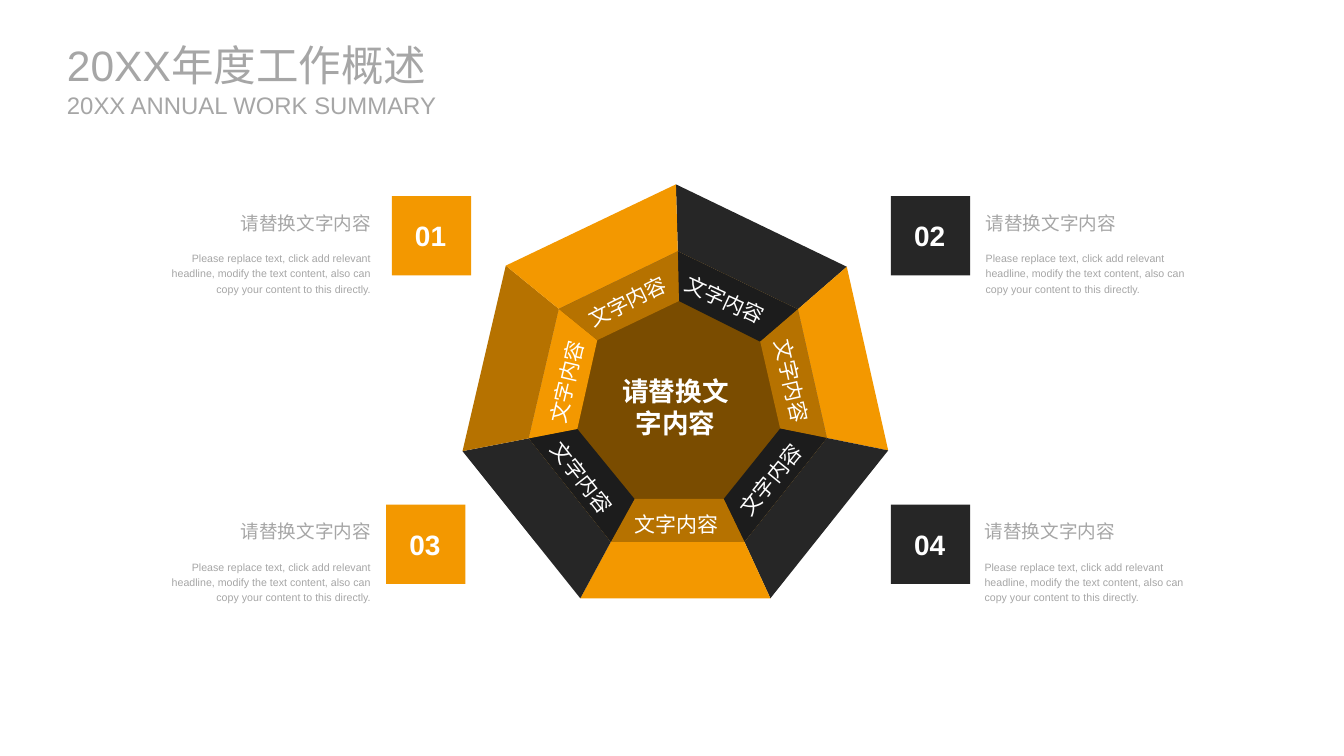
import pptx
import pptx.dml.color
import pptx.enum.shapes
import pptx.enum.text
import pptx.util

Cm = pptx.util.Cm
ALIGN = pptx.enum.text.PP_ALIGN
ANCHOR = pptx.enum.text.MSO_ANCHOR

ORANGE, DARK, BROWN = "F39800", "262626", "B67200"
BLACK, DEEP_BROWN = "1C1C1C", "7A4C00"
GREY, WHITE = "A6A6A6", "FFFFFF"

# Corners of the three nested heptagons in cm, clockwise from the top
OUTER = [(17.96, 4.9), (22.5, 7.09), (23.6, 11.97), (20.47, 15.9),
         (15.42, 15.9), (12.29, 11.99), (13.44, 7.06)]
MIDDLE = [(18.01, 6.68), (21.2, 8.22), (21.97, 11.64), (19.78, 14.4),
          (16.23, 14.4), (14.05, 11.65), (14.85, 8.21)]
INNER = [(18.04, 8), (20.2, 9.08), (20.73, 11.39), (19.23, 13.26),
         (16.86, 13.26), (15.34, 11.4), (15.87, 9.04)]
OUTER_COLOURS = [DARK, ORANGE, DARK, ORANGE, DARK, BROWN, ORANGE]
INNER_COLOURS = [BLACK, BROWN, BLACK, BROWN, BLACK, ORANGE, BROWN]

# Centre x, centre y and rotation of each panel label
PANEL_LABELS = [(19.3, 7.9, 24.7), (21.11, 10.11, 77.4), (20.42, 12.7, 308.9),
                (17.98, 13.87, 0), (15.52, 12.65, 52), (14.99, 10.13, 283.2),
                (16.64, 7.95, 334.1)]

# Number, tile left, tile top, text left, alignment, tile colour
CARDS = [("01", 10.41, 5.21, 4.11, ALIGN.RIGHT, ORANGE),
         ("02", 23.67, 5.21, 26.19, ALIGN.LEFT, DARK),
         ("03", 10.26, 13.41, 4.11, ALIGN.RIGHT, ORANGE),
         ("04", 23.67, 13.41, 26.16, ALIGN.LEFT, DARK)]
CARD_HEADING = "请替换文字内容"
CARD_BODY = ("Please replace text, click add relevant headline, modify the text "
             "content, also can copy your content to this directly.")


def rgb(colour):
    return pptx.dml.color.RGBColor.from_string(colour)


def paint(shape, colour):
    shape.shadow.inherit = False
    shape.fill.solid()
    shape.fill.fore_color.rgb = rgb(colour)
    shape.line.fill.background()


def write(shape, text, size, colour, align=ALIGN.LEFT, anchor=ANCHOR.TOP,
          bold=False, spacing=1.0, insets=(0, 0, 0, 0)):
    """Fill a shape with one paragraph; insets are left, top, right, bottom in cm."""
    frame = shape.text_frame
    frame.word_wrap = True
    frame.auto_size = pptx.enum.text.MSO_AUTO_SIZE.NONE
    frame.vertical_anchor = anchor
    (frame.margin_left, frame.margin_top,
     frame.margin_right, frame.margin_bottom) = map(Cm, insets)
    frame.text = text
    paragraph = frame.paragraphs[0]
    paragraph.alignment = align
    paragraph.line_spacing = spacing
    paragraph.font.name = "Arial"
    paragraph.font.size = pptx.util.Pt(size)
    paragraph.font.bold = bold
    paragraph.font.color.rgb = rgb(colour)


def add_text(slide, left, top, width, height, text, size, colour, **style):
    box = slide.shapes.add_textbox(Cm(left), Cm(top), Cm(width), Cm(height))
    write(box, text, size, colour, **style)
    return box


def add_polygon(slide, corners, colour):
    points = [(Cm(x), Cm(y)) for x, y in corners]
    builder = slide.shapes.build_freeform(*points[0])
    builder.add_line_segments(points[1:], close=True)
    paint(builder.convert_to_shape(), colour)


def add_ring(slide, outside, inside, colours):
    """Draw one four-sided panel per heptagon edge."""
    for i, colour in enumerate(colours):
        j = (i + 1) % len(colours)
        add_polygon(slide, [outside[i], outside[j], inside[j], inside[i]], colour)


def add_heptagon(slide):
    add_ring(slide, OUTER, MIDDLE, OUTER_COLOURS)
    add_polygon(slide, MIDDLE, DEEP_BROWN)
    add_ring(slide, MIDDLE, INNER, INNER_COLOURS)
    add_text(slide, 16.36, 9.83, 3.18, 1.93, "请替换文字内容", 20, WHITE, bold=True,
             align=ALIGN.CENTER, anchor=ANCHOR.BOTTOM, insets=(0.1,) * 4)
    width, height = 3.15, 0.66
    for x, y, angle in PANEL_LABELS:
        label = add_text(slide, x - width / 2, y - height / 2, width, height,
                         "文字内容", 15.8, WHITE, align=ALIGN.CENTER,
                         anchor=ANCHOR.MIDDLE, spacing=1.2, insets=(0.05,) * 4)
        label.rotation = angle


def add_card(slide, number, tile_left, top, text_left, align, colour):
    tile = slide.shapes.add_shape(pptx.enum.shapes.MSO_SHAPE.RECTANGLE,
                                  Cm(tile_left), Cm(top), Cm(2.11), Cm(2.11))
    paint(tile, colour)
    write(tile, number, 21.1, WHITE, bold=True, align=ALIGN.CENTER,
          anchor=ANCHOR.MIDDLE, spacing=1.2, insets=(0, 0, 0.05, 0.2))
    add_text(slide, text_left, top + 0.15, 5.75, 1, CARD_HEADING, 14, GREY,
             align=align, anchor=ANCHOR.MIDDLE, spacing=1.2)
    add_text(slide, text_left, top + 1.42, 5.75, 1.2, CARD_BODY, 8, GREY,
             align=align, spacing=1.2)


def add_title(slide):
    title = slide.shapes.title
    title.left, title.top = Cm(1.78), Cm(1.04)
    title.width, title.height = Cm(9.93), Cm(1.37)
    write(title, "20XX年度工作概述", 32, GREY)
    add_text(slide, 1.78, 2.41, 9.93, 0.76, "20XX ANNUAL WORK SUMMARY", 18, GREY)


def main():
    deck = pptx.Presentation()
    deck.slide_width, deck.slide_height = Cm(35.71), Cm(20.09)
    slide = deck.slides.add_slide(deck.slide_layouts[5])
    add_title(slide)
    add_heptagon(slide)
    for card in CARDS:
        add_card(slide, *card)
    deck.save("out.pptx")


if __name__ == "__main__":
    main()
